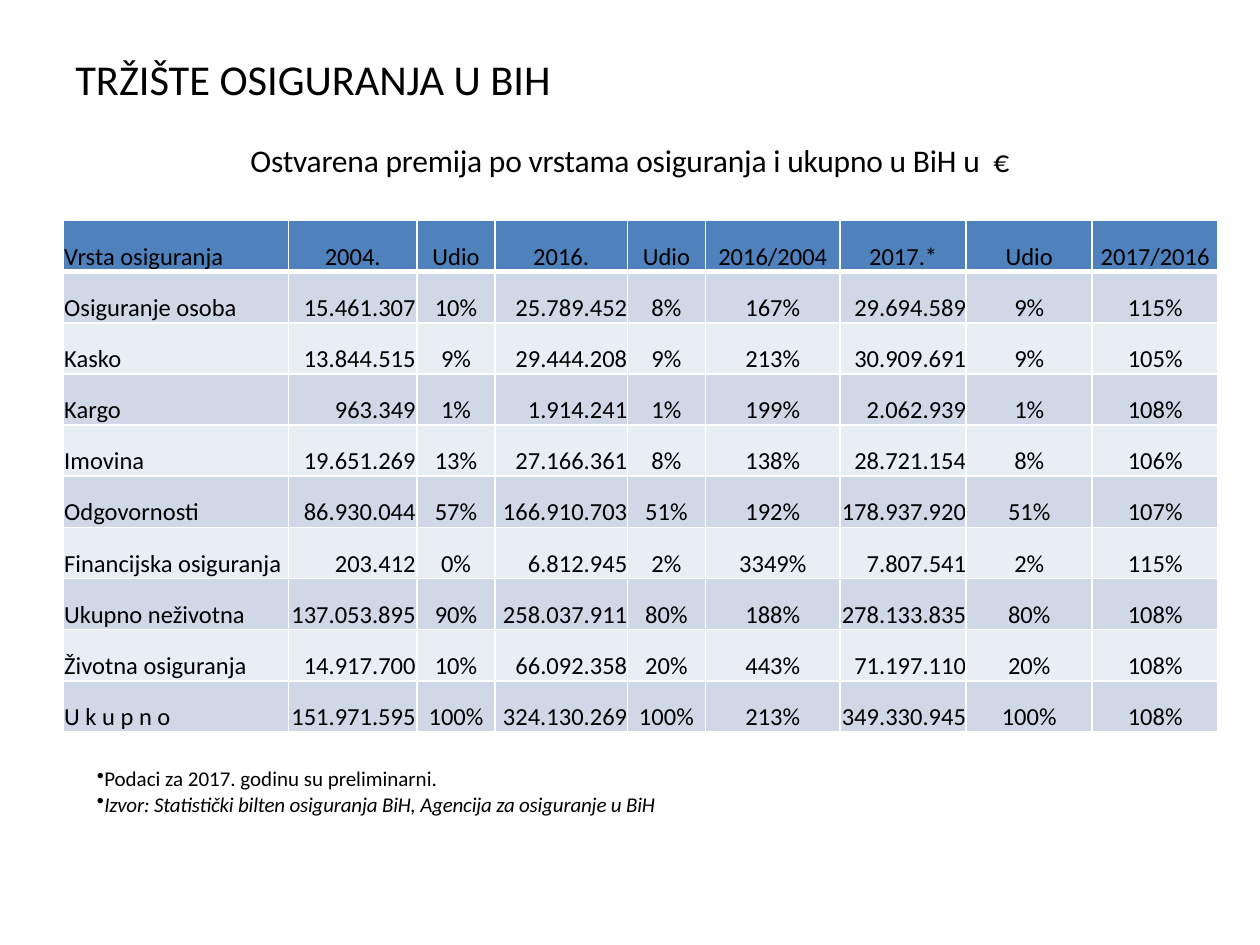
import pptx
import pptx.dml.color
import pptx.enum.text
import pptx.oxml
import pptx.oxml.ns
import pptx.util
import lxml.etree

ALIGN = pptx.enum.text.PP_ALIGN
ANCHOR = pptx.enum.text.MSO_ANCHOR

HEADER = ["Vrsta osiguranja", "2004.", "Udio", "2016.", "Udio", "2016/2004", "2017.*", "Udio", "2017/2016"]
PREMIUMS = [
    ["Osiguranje osoba", "15.461.307", "10%", "25.789.452", "8%", "167%", "29.694.589", "9%", "115%"],
    ["Kasko", "13.844.515", "9%", "29.444.208", "9%", "213%", "30.909.691", "9%", "105%"],
    ["Kargo", "963.349", "1%", "1.914.241", "1%", "199%", "2.062.939", "1%", "108%"],
    ["Imovina", "19.651.269", "13%", "27.166.361", "8%", "138%", "28.721.154", "8%", "106%"],
    ["Odgovornosti", "86.930.044", "57%", "166.910.703", "51%", "192%", "178.937.920", "51%", "107%"],
    ["Financijska osiguranja", "203.412", "0%", "6.812.945", "2%", "3349%", "7.807.541", "2%", "115%"],
    ["Ukupno neživotna", "137.053.895", "90%", "258.037.911", "80%", "188%", "278.133.835", "80%", "108%"],
    ["Životna osiguranja", "14.917.700", "10%", "66.092.358", "20%", "443%", "71.197.110", "20%", "108%"],
    ["U k u p n o", "151.971.595", "100%", "324.130.269", "100%", "213%", "349.330.945", "100%", "108%"],
]
COLUMN_WIDTHS = [17.9, 10.2, 6.2, 10.5, 6.2, 10.7, 10, 10, 10]
AMOUNT_COLUMNS = {1, 3, 6}
FLUSH_COLUMNS = {3, 4, 6, 7, 8}


def color(code):
    return pptx.dml.color.RGBColor.from_string(code)


class Page:
    columns, rows = 100, 75
    font, ink, line = "Calibri", "000000", "FFFFFF"
    head, bands = "4F81BD", ["D0D8E8", "E9EDF4"]

    def __init__(self, deck):
        self.unit_x = deck.slide_width / self.columns
        self.unit_y = deck.slide_height / self.rows
        self.slide = deck.slides.add_slide(deck.slide_layouts[6])

    def place(self, left, top, width, height):
        return (round(left * self.unit_x), round(top * self.unit_y),
                round(width * self.unit_x), round(height * self.unit_y))

    def style(self, para, size, align=ALIGN.LEFT, italic=False, tight=False):
        para.alignment = align
        for span in para.runs:
            span.font.name = self.font
            span.font.size = pptx.util.Pt(size)
            span.font.bold = False
            span.font.italic = italic
            span.font.color.rgb = color(self.ink)
            if tight:
                span.font._element.set("spc", "-10")

    def text(self, area, words, size, anchor=ANCHOR.TOP, bottom=0.05, **look):
        frame = self.slide.shapes.add_textbox(*self.place(*area)).text_frame
        frame.word_wrap = True
        frame.vertical_anchor = anchor
        frame.margin_bottom = pptx.util.Inches(bottom)
        frame.text = words
        self.style(frame.paragraphs[0], size, **look)
        return frame

    def bullets(self, area, lines, size):
        frame = self.text(area, "\n".join(lines), size)
        for index, para in enumerate(frame.paragraphs):
            self.style(para, size, italic=index > 0, tight=index > 0)
            mark = lxml.etree.SubElement(para._p.get_or_add_pPr(), pptx.oxml.ns.qn("a:buChar"))
            mark.set("char", "•")

    def borders(self, cell, bottom):
        properties = cell._tc.get_or_add_tcPr()
        for side, width in (("L", 1), ("R", 1), ("T", 1), ("B", bottom)):
            properties.append(pptx.oxml.parse_xml(
                f'<a:ln{side} {pptx.oxml.ns.nsdecls("a")} w="{pptx.util.Pt(width)}">'
                f'<a:solidFill><a:srgbClr val="{self.line}"/></a:solidFill></a:ln{side}>'))

    def cell(self, cell, words, row, column):
        inset = pptx.util.Inches(0 if row and column in FLUSH_COLUMNS else 0.01)
        cell.margin_left = cell.margin_right = cell.margin_top = inset
        cell.margin_bottom = 0
        cell.vertical_anchor = ANCHOR.BOTTOM
        cell.text = words
        if column == 0:
            align = ALIGN.LEFT
        elif row and column in AMOUNT_COLUMNS:
            align = ALIGN.RIGHT
        else:
            align = ALIGN.CENTER
        self.style(cell.text_frame.paragraphs[0], 14, align)
        self.borders(cell, 1 if row > 1 else 3 if row == 0 else 1)
        cell.fill.solid()
        cell.fill.fore_color.rgb = color(self.bands[(row - 1) % 2] if row else self.head)

    def table(self, left, top, height, widths, records):
        area = self.place(left, top, sum(widths), height)
        table = self.slide.shapes.add_table(len(records), len(widths), *area).table
        for column, width in zip(table.columns, widths):
            column.width = round(width * self.unit_x)
        for row, record in enumerate(records):
            for column, words in enumerate(record):
                self.cell(table.cell(row, column), words, row, column)


def main():
    deck = pptx.Presentation()
    deck.slide_width = pptx.util.Inches(10)
    deck.slide_height = pptx.util.Inches(7.5)
    page = Page(deck)
    page.text((5, 3, 90, 12.5), "TRŽIŠTE OSIGURANJA U BIH", 24.3, anchor=ANCHOR.MIDDLE, bottom=0.66)
    page.table(5, 17.5, 40.6, COLUMN_WIDTHS, [HEADER] + PREMIUMS)
    page.text((5.1, 10.7, 89.8, 4), "Ostvarena premija po vrstama osiguranja i ukupno u BiH u  €", 18,
              align=ALIGN.CENTER, tight=True)
    page.bullets((6.7, 60.3, 70.1, 5), [
        "Podaci za 2017. godinu su preliminarni.",
        "Izvor: Statistički bilten osiguranja BiH, Agencija za osiguranje u BiH",
    ], 12)
    deck.save("out.pptx")


if __name__ == "__main__":
    main()
